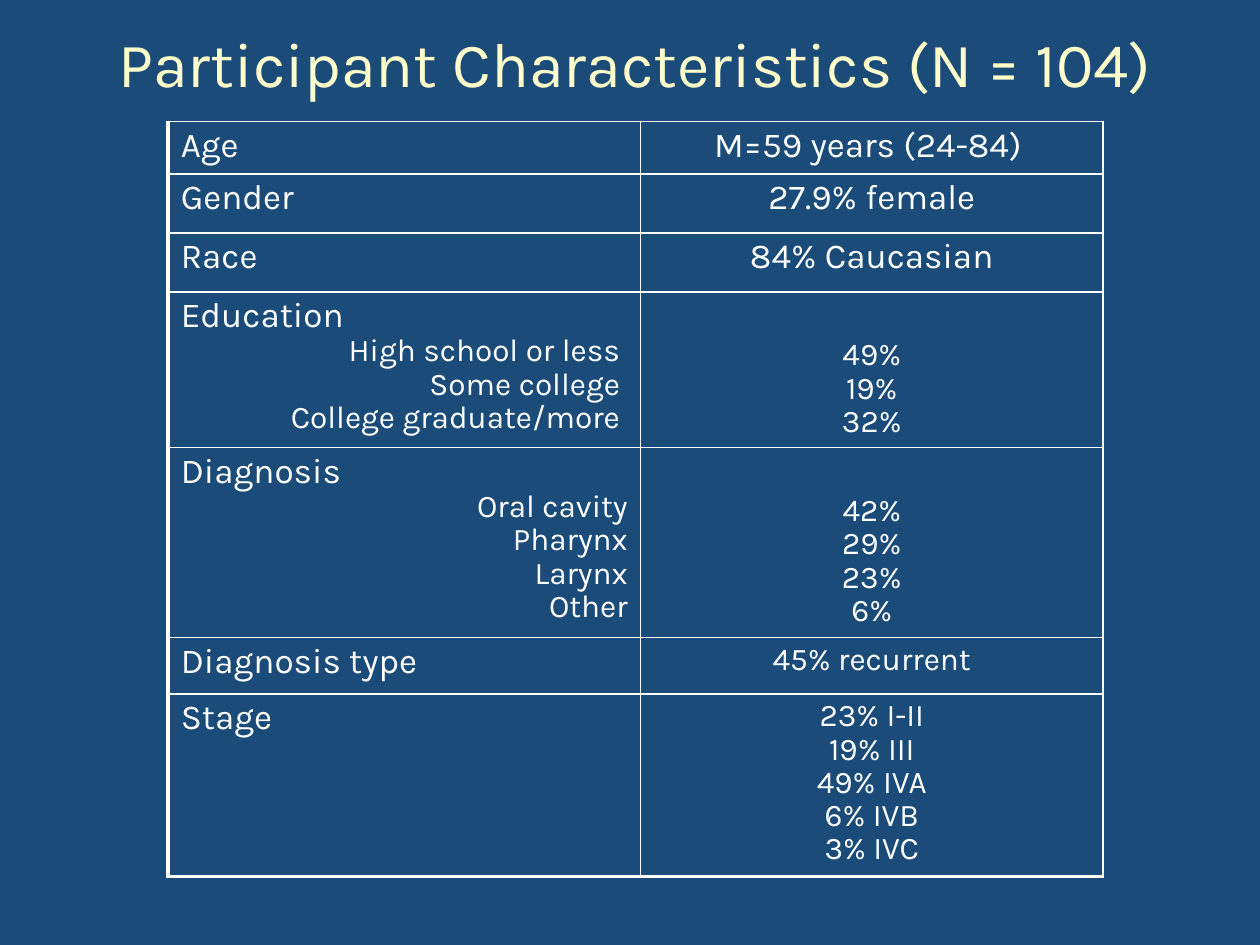
from dataclasses import dataclass

from lxml.etree import SubElement
from pptx import Presentation
from pptx.dml.color import RGBColor
from pptx.enum.text import MSO_ANCHOR, PP_ALIGN as Align
from pptx.oxml.ns import qn
from pptx.util import Cm, Pt


@dataclass(frozen=True)
class Theme:
    font: str = "Karla"
    background: str = "1B4C79"
    title_color: str = "FFFFCC"
    text_color: str = "FFFFFF"
    title_size: int = 36
    label_size: int = 20
    detail_size: int = 18
    thin: float = 1
    thick: float = 2.25


THEME = Theme()
COLUMN_WIDTHS = (9.52, 9.33)
SUBHEADING_DROP = 0.95
WIDE_MARGIN = 0.41

ROWS = [
    (1.06, ["Age"], ["M=59 years (24-84)"]),
    (1.19, ["Gender"], ["27.9% female"]),
    (1.19, ["Race"], ["84% Caucasian"]),
    (3.08, ["Education", "High school or less", "Some college", "College graduate/more"],
     ["49%", "19%", "32%"]),
    (3.75, ["Diagnosis", "Oral cavity", "Pharynx", "Larynx", "Other"],
     ["42%", "29%", "23%", "6%"]),
    (1.14, ["Diagnosis type"], ["45% recurrent"]),
    (3.6, ["Stage"], ["23% I-II", "19% III", "49% IVA", "6% IVB", "3% IVC"]),
]
LARGE_VALUE_ROWS = {"Age", "Gender", "Race"}
WIDE_MARGIN_CELLS = {(0, 1), (3, 0)}


def style_paragraph(paragraph, size, color, alignment):
    paragraph.alignment = alignment
    paragraph.font.name = THEME.font
    paragraph.font.size = Pt(size)
    paragraph.font.color.rgb = RGBColor.from_string(color)


def add_title(slide, text):
    box = slide.shapes.add_textbox(Cm(2.11), Cm(0.2), Cm(21.39), Cm(2.11))
    frame = box.text_frame
    frame.word_wrap = True
    frame.vertical_anchor = MSO_ANCHOR.MIDDLE
    frame.text = text
    style_paragraph(frame.paragraphs[0], THEME.title_size, THEME.title_color, Align.CENTER)


def write_lines(cell, lines):
    frame = cell.text_frame
    frame.text = "\n".join(text for text, _, _ in lines)
    for paragraph, (_, size, alignment) in zip(frame.paragraphs, lines):
        paragraph.line_spacing = 0.9
        style_paragraph(paragraph, size, THEME.text_color, alignment)


def set_borders(cell, left, bottom):
    properties = cell._tc.get_or_add_tcPr()
    widths = {"a:lnL": left, "a:lnR": THEME.thin, "a:lnT": THEME.thin, "a:lnB": bottom}
    for index, (tag, width) in enumerate(widths.items()):
        line = SubElement(properties, qn(tag), w=str(Pt(width)))
        fill = SubElement(line, qn("a:solidFill"))
        SubElement(fill, qn("a:srgbClr"), val=THEME.text_color)
        properties.insert(index, line)


def add_characteristics_table(slide):
    height = sum(row[0] for row in ROWS)
    table = slide.shapes.add_table(
        len(ROWS), 2, Cm(3.39), Cm(2.45), Cm(sum(COLUMN_WIDTHS)), Cm(height)
    ).table
    table.first_row = False
    table.horz_banding = False
    for column, width in zip(table.columns, COLUMN_WIDTHS):
        column.width = Cm(width)

    for row_index, (row_height, labels, values) in enumerate(ROWS):
        table.rows[row_index].height = Cm(row_height)
        heading, *details = labels
        label_cell, value_cell = table.cell(row_index, 0), table.cell(row_index, 1)
        write_lines(
            label_cell,
            [(heading, THEME.label_size, Align.LEFT)]
            + [(text, THEME.detail_size, Align.RIGHT) for text in details],
        )
        value_size = THEME.label_size if heading in LARGE_VALUE_ROWS else THEME.detail_size
        write_lines(value_cell, [(text, value_size, Align.CENTER) for text in values])
        if details:
            value_cell.margin_top = Cm(SUBHEADING_DROP)

        bottom = THEME.thick if row_index == len(ROWS) - 1 else THEME.thin
        for column_index, cell in enumerate((label_cell, value_cell)):
            cell.fill.background()
            if (row_index, column_index) in WIDE_MARGIN_CELLS:
                cell.margin_right = Cm(WIDE_MARGIN)
            set_borders(cell, THEME.thin if column_index else THEME.thick, bottom)


def main():
    presentation = Presentation()
    presentation.slide_width = Cm(25.4)
    presentation.slide_height = Cm(19.05)
    slide = presentation.slides.add_slide(presentation.slide_layouts[6])
    background = slide.background.fill
    background.solid()
    background.fore_color.rgb = RGBColor.from_string(THEME.background)
    add_title(slide, "Participant Characteristics (N = 104)")
    add_characteristics_table(slide)
    presentation.save("out.pptx")


if __name__ == "__main__":
    main()
